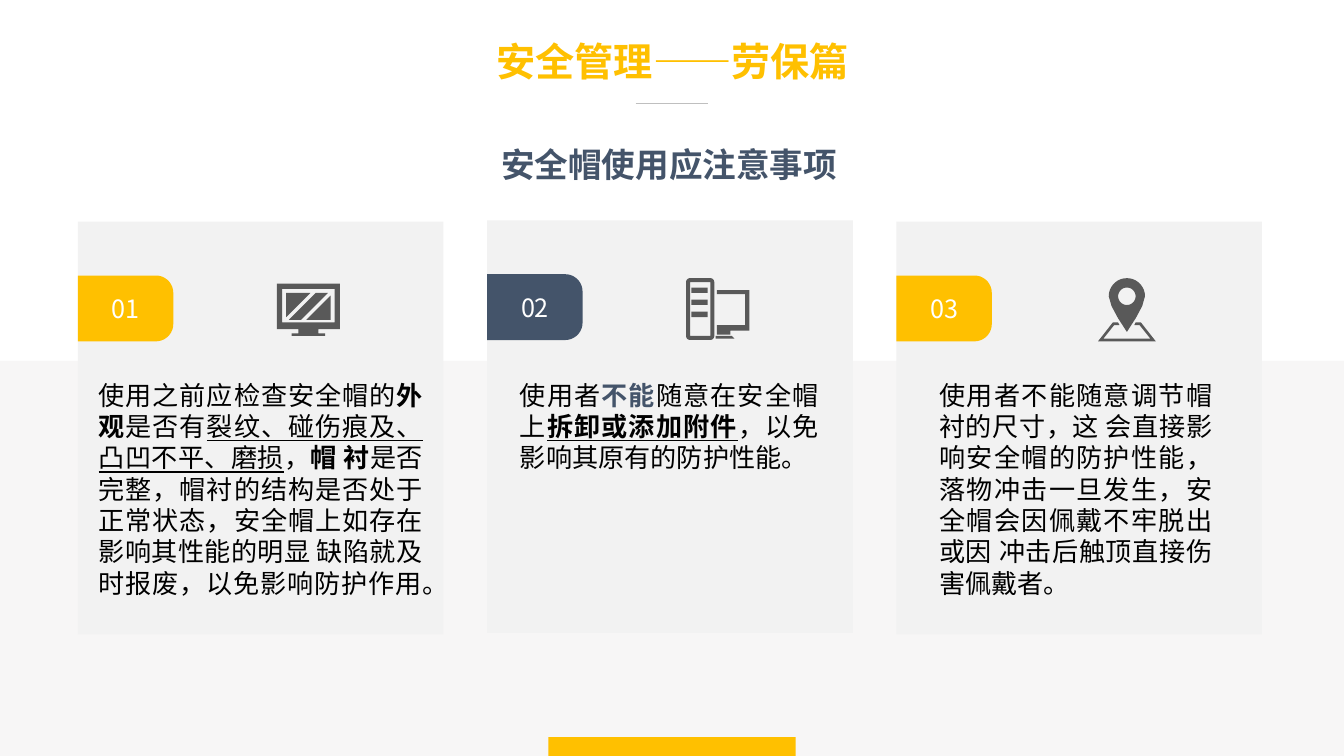
from math import cos, radians, sin

from lxml.etree import SubElement
from pptx import Presentation
from pptx.dml.color import RGBColor as RGB
from pptx.enum.shapes import MSO_CONNECTOR as LINE, MSO_SHAPE as SHAPE
from pptx.enum.text import MSO_ANCHOR as ANCHOR, PP_ALIGN as ALIGN
from pptx.oxml.ns import qn
from pptx.util import Inches, Pt

GOLD = RGB(0xFF, 0xC0, 0x00)
SLATE = RGB(0x44, 0x54, 0x6A)
CARD = RGB(0xF2, 0xF2, 0xF2)
BAND = RGB(0xE7, 0xE6, 0xE6)
ICON = RGB(0x59, 0x59, 0x59)
RULE = RGB(0xBF, 0xBF, 0xBF)
BLACK = RGB(0, 0, 0)
WHITE = RGB(0xFF, 0xFF, 0xFF)

WIDE, HIGH = 100, 56.25  # grid columns and rows
CELL = Inches(10) / WIDE


def grid(*cells):
    return [round(n * CELL) for n in cells]


def arc(x, y, r, start, end, step=10):
    """Points on a circle, in degrees clockwise from the right."""
    return [(x + r * cos(radians(a)), y + r * sin(radians(a)))
            for a in range(start, end + 1, step)]


def box(x, y, w, h):
    return [(x, y), (x + w, y), (x + w, y + h), (x, y + h)]


def bend(w, h, r):
    """The two rounded corners on the right of an outline."""
    return arc(w - r, r, r, -90, 0) + arc(w - r, h - r, r, 0, 90)


def tab(w, h, r):
    return [(0, 0), *bend(w, h, r), (0, h)]


def case(w, h, r):
    return [*bend(w, h, r), *arc(r, h - r, r, 90, 180),
            *arc(r, r, r, 180, 270)]


class Deck:
    """Holds the style and the current slide; lengths are grid cells."""
    font = "Noto Sans CJK SC"
    lead = 1.2

    def __init__(self):
        self.show = Presentation()
        self.show.slide_width, self.show.slide_height = grid(WIDE, HIGH)
        self.slide = self.show.slides.add_slide(self.show.slide_layouts[6])
        self.shapes = self.slide.shapes

    def paint(self, shape, fill):
        shape.shadow.inherit = False
        shape.fill.solid()
        shape.fill.fore_color.rgb = fill
        shape.line.fill.background()
        return shape

    def rect(self, x, y, w, h, fill, alpha=None):
        shape = self.shapes.add_shape(SHAPE.RECTANGLE, *grid(x, y, w, h))
        self.paint(shape, fill)
        if alpha:
            tint = shape._element.spPr.find(".//" + qn("a:srgbClr"))
            SubElement(tint, qn("a:alpha")).set("val", str(alpha * 1000))

    def free(self, x, y, paths, fill):
        """One shape of closed paths; a path inside another cuts a hole."""
        first, *rest = [[grid(*dot) for dot in path] for path in paths]
        pen = self.shapes.build_freeform(*first[0], scale=1.0)
        pen.add_line_segments(first[1:], close=True)
        for path in rest:
            pen.move_to(*path[0])
            pen.add_line_segments(path[1:], close=True)
        return self.paint(pen.convert_to_shape(*grid(x, y)), fill)

    def style(self, frame, runs, size, align):
        """Fill a frame with (text, colour, marks); marks hold b and u."""
        para = frame.paragraphs[0]
        para.alignment = align
        para.line_spacing = Pt(size * self.lead)
        for text, color, marks in runs:
            run = para.add_run()
            run.text = text
            font = run.font
            font.size, font.name = Pt(size), self.font
            font.color.rgb = color
            font.bold, font.underline = "b" in marks, "u" in marks
            SubElement(run._r.get_or_add_rPr(), qn("a:ea")).set(
                "typeface", self.font)

    def text(self, x, y, w, h, runs, size, align=ALIGN.JUSTIFY):
        frame = self.shapes.add_textbox(*grid(x, y, w, h)).text_frame
        frame.word_wrap = True
        self.style(frame, runs, size, align)

    def label(self, x, y, w, h, r, text, fill):
        frame = self.free(x, y, [tab(w, h, r)], fill).text_frame
        frame.vertical_anchor = ANCHOR.MIDDLE
        self.style(frame, [(text, WHITE, "")], 13.5, ALIGN.CENTER)

    def rule(self, x, y, w, color, weight):
        line = self.shapes.add_connector(
            LINE.STRAIGHT, *grid(x, y, x + w, y))
        line.line.color.rgb = color
        line.line.width = Pt(weight)
        SubElement(line._element.spPr, qn("a:effectLst"))


SCREEN = [
    [(0, 0), (4.7, 0), (4.7, 3.4), (3.1, 3.4), (3.1, 3.7), (3.6, 3.7),
     (3.6, 3.9), (1.1, 3.9), (1.1, 3.7), (1.6, 3.7), (1.6, 3.4), (0, 3.4)],
    box(0.4, 0.4, 3.9, 2.5),
    [(4, 0.9), (4, 2.7), (2.2, 2.7)],
    [(2.9, 0.7), (3.8, 0.7), (1.8, 2.7), (0.9, 2.7)],
    [(0.7, 0.7), (2.5, 0.7), (0.7, 2.5)],
]
TOWER = [
    case(2.1, 4.6, 0.3),
    box(0.3, 0.3, 1.5, 4),
    *[box(0.4, y, 1.2, 0.4) for y in (0.7, 1.6, 2.5)],
    [(2.3, 0.9), (4.7, 0.9), (4.7, 3.9), (3.3, 3.9), (3.3, 4.2),
     (2.3, 4.2), (2.3, 3.5), (4.4, 3.5), (4.4, 1.2), (2.3, 1.2)],
    [(2.2, 4.3), (3.4, 4.3), (3.6, 4.5), (2.2, 4.5)],
]
PIN = [
    [(1.1, 3.3), (1.5, 3.3), (1.6, 3.5), (1.2, 3.5), (0.4, 4.5), (3.9, 4.5),
     (3.1, 3.5), (2.7, 3.5), (2.8, 3.3), (3.2, 3.3), (4.3, 4.7), (0, 4.7)],
    [*arc(2.15, 1.35, 1.35, 180, 360), (3.29, 2.08), (2.82, 2.96),
     (2.15, 4), (1.48, 2.96), (1.01, 2.08)],
    arc(2.15, 1.35, 0.65, 0, 350),
]

CHECK = [
    ("使用之前应检查安全帽的", BLACK, ""),
    ("外观", BLACK, "b"),
    ("是否有", BLACK, ""),
    ("裂纹、碰伤痕及、凸凹不平、磨损", BLACK, "u"),
    ("，", BLACK, ""),
    ("帽 衬", BLACK, "b"),
    ("是否完整，帽衬的结构是否处于正常状态，安全帽上如存在影响其性能的明显 "
     "缺陷就及时报废，以免影响防护作用。", BLACK, ""),
]
PARTS = [
    ("使用者", BLACK, ""),
    ("不能", SLATE, "b"),
    ("随意在安全帽上", BLACK, ""),
    ("拆卸或添加附件", BLACK, "bu"),
    ("，以免影响其原有的防护性能。", BLACK, ""),
]
LINING = [
    ("使用者不能随意调节帽衬的尺寸，这 会直接影响安全帽的防护性能，落物冲击"
     "一旦发生，安全帽会因佩戴不牢脱出或因 冲击后触顶直接伤害佩戴者。",
     BLACK, ""),
]

# card top, tab colour, icon, icon offset, text left, width, height, runs
CARDS = [
    (16.5, GOLD, SCREEN, (14.8, 4.6), 6.35, 26.1, 17.5, CHECK),
    (16.4, SLATE, TOWER, (14.8, 4.3), 37.7, 24.2, 8.1, PARTS),
    (16.5, GOLD, PIN, (15, 4.2), 68.9, 22.3, 17.5, LINING),
]


def main():
    deck = Deck()
    deck.rect(0, 26.85, WIDE, HIGH - 26.85, BAND, alpha=33)
    deck.rect(40.8, 54.85, 18.4, HIGH - 54.85, GOLD)
    deck.text(33.2, 2.3, 33.7, 4.5,
              [("安全管理——劳保篇", GOLD, "b")], 21, ALIGN.CENTER)
    deck.rule(47.3, 7.7, 5.4, RULE, 0.25)
    deck.text(36.3, 10.2, 28, 4,
              [("安全帽使用应注意事项", SLATE, "b")], 18, ALIGN.LEFT)
    for i, (top, fill, icon, (dx, dy), x, w, h, runs) in enumerate(CARDS):
        left = 5.8 + 30.45 * i
        deck.rect(left, top, 27.2, 30.7, CARD)
        deck.label(left, top + 4, 7.1, 4.9, 1.3, f"{i + 1:02}", fill)
        deck.free(left + dx, top + dy, icon, ICON)
        deck.text(x, 27.7, w, h, runs, 14)
    deck.show.save("out.pptx")


if __name__ == "__main__":
    main()
